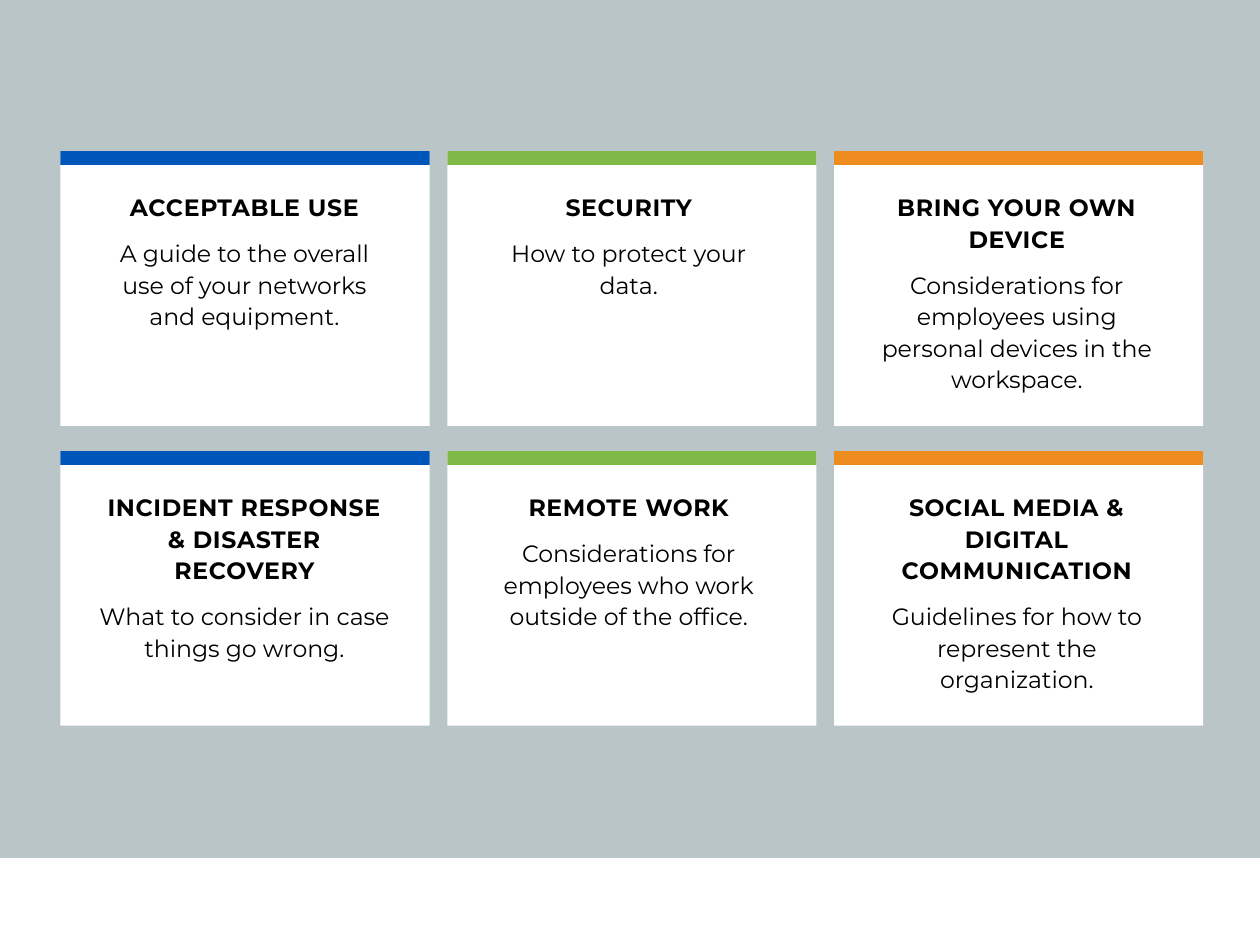
from dataclasses import dataclass

from pptx import Presentation, util as u
from pptx.dml.color import RGBColor
from pptx.enum import shapes, text
from pptx.slide import Slide


@dataclass(frozen=True)
class Theme:
    backdrop: str = "BAC5C8"
    white: str = "FFFFFF"
    ink: str = "000000"
    accents: tuple[str, ...] = ("0055B8", "7FBA48", "EE8C1F")
    font: str = "Montserrat"
    size: float = 13.5
    leading: float = 18


@dataclass(frozen=True)
class Grid:
    """Card grid, in inches."""
    left: float = 0.48
    top: float = 1.2
    col_pitch: float = 3.07
    row_pitch: float = 2.38
    card_w: float = 2.93
    card_h: float = 2.18
    bar_h: float = 0.11
    text_w: float = 2.52
    text_h: float = 1.21
    text_top: float = 0.26
    text_indents: tuple[float, ...] = (0.2, 0.18, 0.19)


@dataclass(frozen=True)
class Policy:
    title: str
    summary: str


THEME = Theme()
GRID = Grid()
SLIDE_W, SLIDE_H = 10, 7.5
FOOTER_TOP = 6.81

POLICIES = (
    Policy("ACCEPTABLE USE",
           "A guide to the overall use of your networks and equipment."),
    Policy("SECURITY", "How to protect your data."),
    Policy("BRING YOUR OWN DEVICE",
           "Considerations for employees using personal devices in the workspace."),
    Policy("INCIDENT RESPONSE & DISASTER RECOVERY",
           "What to consider in case things go wrong."),
    Policy("REMOTE WORK",
           "Considerations for employees who work outside of the office."),
    Policy("SOCIAL MEDIA & DIGITAL COMMUNICATION",
           "Guidelines for how to represent the organization."),
)


def add_rect(s: Slide, x: float, y: float, w: float, h: float, color: str) -> None:
    sp = s.shapes.add_shape(shapes.MSO_SHAPE.RECTANGLE,
                            u.Inches(x), u.Inches(y), u.Inches(w), u.Inches(h))
    sp.shadow.inherit = False
    sp.fill.solid()
    sp.fill.fore_color.rgb = RGBColor.from_string(color)
    sp.line.fill.background()


def add_policy_text(s: Slide, x: float, y: float, policy: Policy) -> None:
    sp = s.shapes.add_textbox(u.Inches(x), u.Inches(y),
                              u.Inches(GRID.text_w), u.Inches(GRID.text_h))
    tf = sp.text_frame
    tf.word_wrap = True
    tf.text = f"{policy.title}\n{policy.summary}"
    for p, bold, after in zip(tf.paragraphs, (True, False), (8.2, 1.5)):
        p.alignment = text.PP_ALIGN.CENTER
        p.line_spacing = u.Pt(THEME.leading)
        p.space_before = u.Pt(0)
        p.space_after = u.Pt(after)
        r = p.runs[0]
        r.font.name = THEME.font
        r.font.size = u.Pt(THEME.size)
        r.font.bold = bold
        r.font.color.rgb = RGBColor.from_string(THEME.ink)
        if bold:
            r._r.get_or_add_rPr().set("spc", "40")


def add_card(s: Slide, col: int, row: int, policy: Policy) -> None:
    x = GRID.left + col * GRID.col_pitch
    y = GRID.top + row * GRID.row_pitch
    add_rect(s, x, y, GRID.card_w, GRID.card_h, THEME.white)
    add_rect(s, x, y, GRID.card_w, GRID.bar_h, THEME.accents[col])
    add_policy_text(s, x + GRID.text_indents[col], y + GRID.text_top, policy)


def main() -> None:
    prs = Presentation()
    prs.slide_width, prs.slide_height = u.Inches(SLIDE_W), u.Inches(SLIDE_H)
    s = prs.slides.add_slide(prs.slide_layouts[6])
    add_rect(s, 0, 0, SLIDE_W, SLIDE_H, THEME.backdrop)
    add_rect(s, 0, FOOTER_TOP, SLIDE_W, SLIDE_H - FOOTER_TOP, THEME.white)
    for i, policy in enumerate(POLICIES):
        row, col = divmod(i, len(THEME.accents))
        add_card(s, col, row, policy)
    prs.save("out.pptx")


if __name__ == "__main__":
    main()
